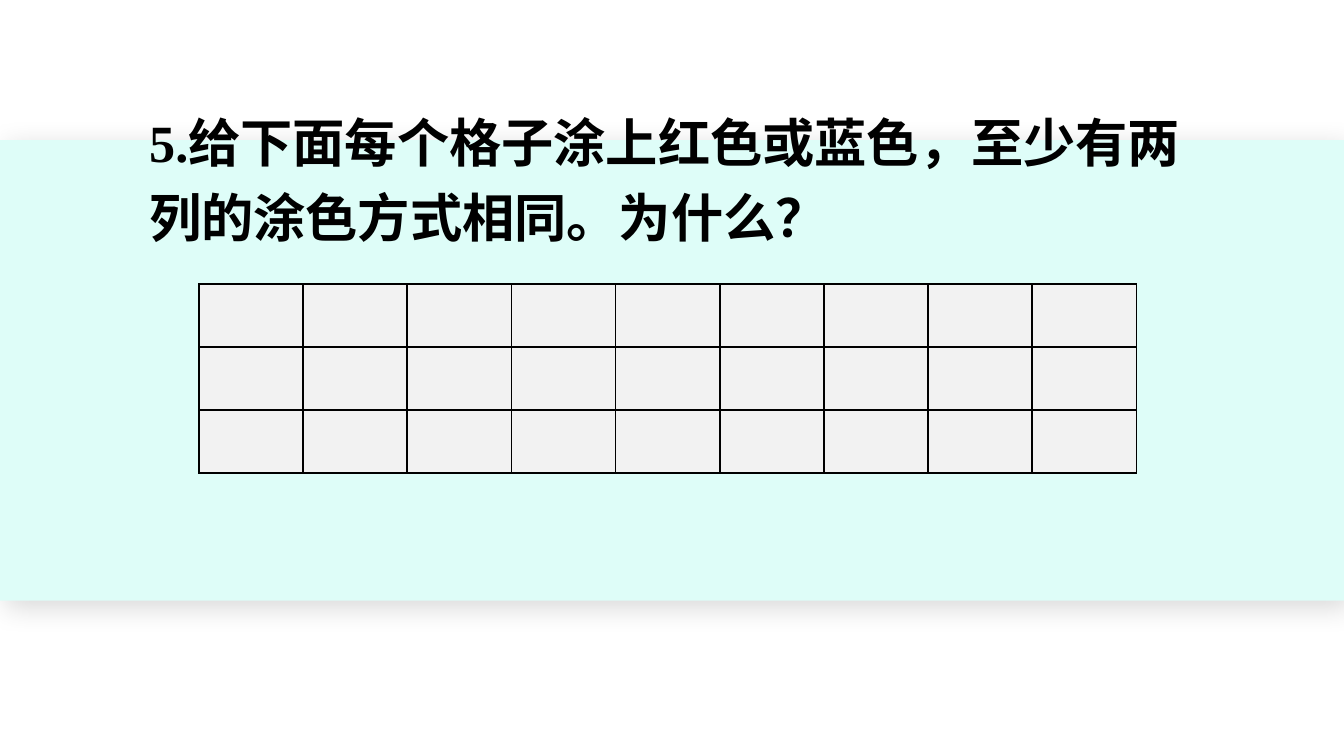
from lxml import etree
from pptx import Presentation
from pptx.dml.color import RGBColor
from pptx.enum import shapes, text
from pptx.oxml import ns
from pptx.util import Pt

PX = 9525  # 96 px to the inch
COLORS = {"band": "DEFDF8", "ink": "000000", "cell": "F2F2F2"}
FONT = {"name": "Times New Roman", "size": Pt(28), "bold": True}
FRAME = {"word_wrap": True, "auto_size": text.MSO_AUTO_SIZE.SHAPE_TO_FIT_TEXT,
         "vertical_anchor": text.MSO_ANCHOR.TOP}
PARAGRAPH = {"alignment": text.PP_ALIGN.LEFT, "line_spacing": 1.2}
QUESTION = "5.给下面每个格子涂上红色或蓝色，至少有两列的涂色方式相同。为什么？"


def emu(*lengths):
    return [n * PX for n in lengths]


def rgb(name):
    return RGBColor.from_string(COLORS[name])


def apply(obj, formats):
    for key, value in formats.items():
        setattr(obj, key, value)


def add_child(parent, tag, **attrs):
    return etree.SubElement(parent, ns.qn(tag), attrs)


def add_color(parent, name):
    return add_child(parent, "a:srgbClr", val=COLORS[name])


def add_band(s, box):
    sp = s.shapes.add_shape(shapes.MSO_SHAPE.RECTANGLE, *emu(*box))
    sp.fill.solid()
    sp.fill.fore_color.rgb = rgb("band")
    sp.line.fill.background()
    # Soft shadow
    effects = add_child(sp._element.spPr, "a:effectLst")
    shadow = add_child(effects, "a:outerShdw", blurRad=str(Pt(15)),
                       dist=str(Pt(5)), dir="2700000", algn="ctr", rotWithShape="0")
    add_child(add_color(shadow, "ink"), "a:alpha", val="15000")
    # Behind the placeholders
    s.shapes._spTree.insert(2, sp._element)


def add_question(s, box):
    sp = s.shapes.title
    sp.left, sp.top, sp.width, sp.height = emu(*box)
    tf = sp.text_frame
    apply(tf, FRAME)
    p = tf.paragraphs[0]
    apply(p, PARAGRAPH)
    r = p.add_run()
    r.text = QUESTION
    apply(r.font, FONT)
    r.font.color.rgb = rgb("ink")


def add_borders(cell):
    tc_pr = cell._tc.get_or_add_tcPr()
    for i, side in enumerate(("a:lnL", "a:lnR", "a:lnT", "a:lnB")):
        line = etree.Element(ns.qn(side), w=str(Pt(1)))
        add_color(add_child(line, "a:solidFill"), "ink")
        tc_pr.insert(i, line)


def add_grid(s, box, rows, cols):
    table = s.shapes.add_table(rows, cols, *emu(*box)).table
    apply(table, {"first_row": False, "horz_banding": False})
    for cell in table.iter_cells():
        cell.fill.solid()
        cell.fill.fore_color.rgb = rgb("cell")
        add_borders(cell)


def main():
    prs = Presentation()
    prs.slide_width, prs.slide_height = emu(960, 540)
    s = prs.slides.add_slide(prs.slide_layouts[5])
    add_band(s, (0, 100, 960, 329))
    add_question(s, (97, 65, 770, 118))
    add_grid(s, (142, 203, 670, 135), rows=3, cols=9)
    prs.save("out.pptx")


if __name__ == "__main__":
    main()
